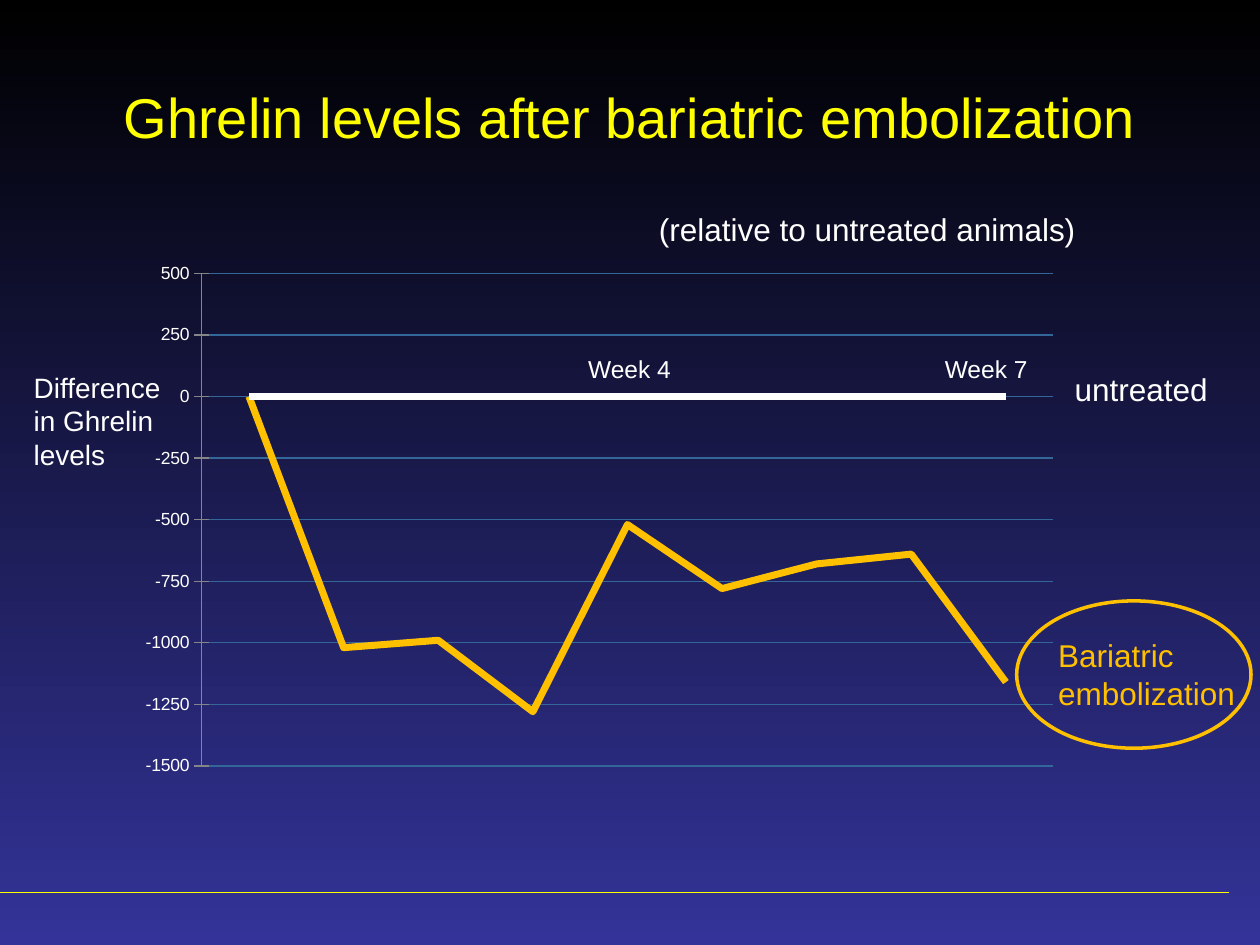
from dataclasses import dataclass

from lxml import etree
from pptx import Presentation
from pptx.chart.data import CategoryChartData
from pptx.dml.color import RGBColor
from pptx.enum import chart as charts, shapes, text
from pptx.oxml import parse_xml
from pptx.oxml.ns import nsdecls, qn
from pptx.util import Pt

FONT = "Arial"
COLORS = {
    "night": "000000",
    "indigo": "333399",
    "yellow": "FFFF00",
    "gold": "FFC000",
    "white": "FFFFFF",
    "grid": "336699",
    "axis": "868686",
}


@dataclass(frozen=True)
class Label:
    words: str
    left: float
    top: float
    width: float
    height: float
    size: float = 18
    color: str = "white"


@dataclass(frozen=True)
class Group:
    name: str
    levels: tuple
    color: str


LABELS = [
    Label("Week 4", 329, 198.7, 72, 24.5, size=14),
    Label("Week 7", 532.8, 198.7, 72, 24.5, size=14),
    Label("Bariatric embolization", 597.6, 360, 117.4, 51, color="gold"),
    Label("untreated", 607, 208.1, 108, 29),
    Label("(relative to untreated animals)", 369.4, 116.6, 257.8, 29),
    Label("Difference in Ghrelin levels", 12.2, 208.1, 90, 65.5, size=16),
]
GROUPS = [
    Group("Series 1", (0, -1020, -990, -1280, -520, -780, -680, -640, -1160), "gold"),
    Group("Series 2", (0,) * 9, "white"),
]


def rgb(name: str) -> RGBColor:
    return RGBColor.from_string(COLORS[name])


def style_line(line, color: str, width: float) -> None:
    line.color.rgb = rgb(color)
    line.width = Pt(width)


def write(frame, words: str, *, size: float, color: str,
          align=text.PP_ALIGN.LEFT, anchor=text.MSO_ANCHOR.TOP) -> None:
    frame.word_wrap = True
    frame.vertical_anchor = anchor
    paragraph = frame.paragraphs[0]
    paragraph.alignment = align
    run = paragraph.add_run()
    run.text = words
    run.font.name = FONT
    run.font.size = Pt(size)
    run.font.color.rgb = rgb(color)


def paint_background(slide) -> None:
    fill = slide.background.fill
    fill.gradient()
    fill.gradient_angle = 270
    for stop, color, position in zip(fill.gradient_stops, ("night", "indigo"), (0, 1)):
        stop.color.rgb = rgb(color)
        stop.position = position


def add_title(slide, words: str) -> None:
    title = slide.shapes.title
    title.left, title.top, title.width, title.height = Pt(36), Pt(21.6), Pt(648), Pt(90)
    write(title.text_frame, words, size=32, color="yellow",
          align=text.PP_ALIGN.CENTER, anchor=text.MSO_ANCHOR.MIDDLE)


def add_footer_rule(slide) -> None:
    rule = slide.shapes.add_connector(
        shapes.MSO_CONNECTOR.STRAIGHT, Pt(0), Pt(510), Pt(702), Pt(510))
    style_line(rule.line, "yellow", 0.75)
    etree.SubElement(rule._element.spPr, qn("a:effectLst"))


def fix_plot_area(chart, x: float, y: float, w: float, h: float) -> None:
    """Pin the inner plot area, in fractions of the chart."""
    plot_area = chart._chartSpace.chart.plotArea
    for old in plot_area.findall(qn("c:layout")):
        plot_area.remove(old)
    modes = "".join(f'<c:{tag} val="edge"/>' for tag in ("xMode", "yMode"))
    sizes = "".join(f'<c:{tag} val="{value}"/>'
                    for tag, value in zip("xywh", (x, y, w, h)))
    plot_area.insert(0, parse_xml(
        f'<c:layout {nsdecls("c")}><c:manualLayout><c:layoutTarget val="inner"/>'
        f"{modes}{sizes}</c:manualLayout></c:layout>"))


def add_ghrelin_chart(slide, groups: list[Group]) -> None:
    data = CategoryChartData()
    data.categories = [str(n + 1) for n in range(len(groups[0].levels))]
    for group in groups:
        data.add_series(group.name, group.levels)
    chart = slide.shapes.add_chart(
        charts.XL_CHART_TYPE.LINE, Pt(72), Pt(144), Pt(540.7), Pt(306), data).chart
    chart.has_title = False
    chart.has_legend = False
    chart.font.name = FONT
    chart.font.size = Pt(10)
    chart.plots[0].vary_by_categories = False
    fix_plot_area(chart, 0.08, 0.04, 0.9, 0.92)

    chart.category_axis.visible = False
    axis = chart.value_axis
    axis.minimum_scale, axis.maximum_scale, axis.major_unit = -1500, 500, 250
    axis.major_tick_mark = charts.XL_TICK_MARK.CROSS
    axis.minor_tick_mark = charts.XL_TICK_MARK.NONE
    axis.tick_labels.font.size = Pt(10)
    axis.tick_labels.font.name = FONT
    axis.tick_labels.font.color.rgb = rgb("white")
    style_line(axis.format.line, "axis", 0.75)
    style_line(axis.major_gridlines.format.line, "grid", 0.75)

    for series, group in zip(chart.plots[0].series, groups):
        series.smooth = False
        series.marker.style = charts.XL_MARKER_STYLE.NONE
        style_line(series.format.line, group.color, 4)


def add_label(slide, label: Label) -> None:
    box = slide.shapes.add_textbox(
        Pt(label.left), Pt(label.top), Pt(label.width), Pt(label.height))
    write(box.text_frame, label.words, size=label.size, color=label.color)


def add_highlight(slide) -> None:
    ring = slide.shapes.add_shape(
        shapes.MSO_SHAPE.OVAL, Pt(581), Pt(343.4), Pt(133.9), Pt(84.2))
    ring.shadow.inherit = False
    ring.fill.background()
    style_line(ring.line, "gold", 2)


def main() -> None:
    deck = Presentation()
    deck.slide_width, deck.slide_height = Pt(720), Pt(540)
    slide = deck.slides.add_slide(deck.slide_layouts[5])
    paint_background(slide)
    add_footer_rule(slide)
    add_title(slide, "Ghrelin levels after bariatric embolization")
    add_ghrelin_chart(slide, GROUPS)
    for label in LABELS:
        add_label(slide, label)
    add_highlight(slide)
    deck.save("out.pptx")


if __name__ == "__main__":
    main()
